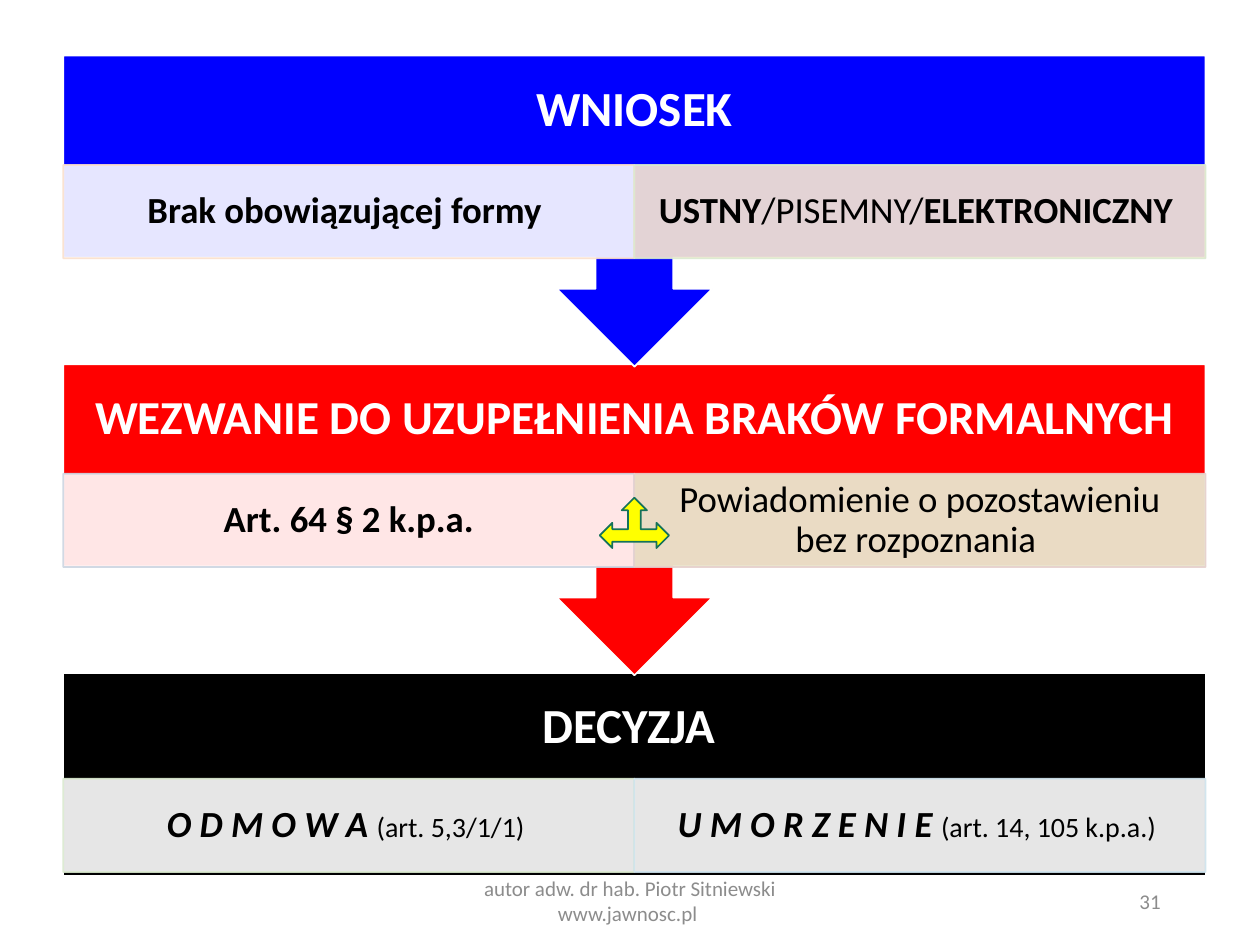
from pptx import Presentation
from pptx.dml.color import RGBColor
from pptx.enum.shapes import MSO_SHAPE as Shape
from pptx.enum.text import MSO_ANCHOR as Anchor, PP_ALIGN as Align
from pptx.oxml.ns import qn
from pptx.util import Pt
from lxml.etree import SubElement

LEFT, WIDTH = 36.1, 652.8
TOP, STEP = 31.7, 176.4
TITLE_HEIGHT, CELL_HEIGHT = 62.5, 53.3
CELL_SIZE = 21
BOLD, ITALIC = "b", "i"

# Run: (text, size, style letters). Cell: (fill, border, runs).
STAGES = [
    dict(color="0000FF", title=("WNIOSEK", 28), shape=Shape.UP_ARROW_CALLOUT,
         height=177.8, cell_offset=62.6, cells=[
             ("FFFFFF", "FADFCC", [("Brak obowiązującej formy ", CELL_SIZE, BOLD)]),
             ("FCEBD1", "DAE9CF", [("USTNY", CELL_SIZE, BOLD),
                                   ("/PISEMNY/", CELL_SIZE, ""),
                                   ("ELEKTRONICZNY ", CELL_SIZE, BOLD)])]),
    dict(color="FF0000", title=("WEZWANIE DO UZUPEŁNIENIA BRAKÓW FORMALNYCH ", 27),
         shape=Shape.UP_ARROW_CALLOUT, height=177.8, cell_offset=62.6, cells=[
             ("FFFFFF", "CDD5E2", [("Art. 64 § 2 k.p.a.", CELL_SIZE, BOLD)]),
             ("E8F3DA", "E6D0CC",
              [("Powiadomienie o pozostawieniu bez rozpoznania ", CELL_SIZE, "")])]),
    dict(color="000000", title=("DECYZJA ", 28), shape=Shape.RECTANGLE,
         height=115.9, cell_offset=60.5, cells=[
             ("FFFFFF", "DAE9CF", [("O D M O W A ", CELL_SIZE, BOLD + ITALIC),
                                   ("(art. 5,3/1/1) ", 16, "")]),
             ("FFFFFF", "CEE3ED", [("U M O R Z E N I E ", CELL_SIZE, BOLD + ITALIC),
                                   ("(art. 14, 105 k.p.a.) ", 16, "")])]),
]


def rgb(code):
    return RGBColor.from_string(code)


def set_alpha(fill_owner, percent):
    """Make the solid fill held by an XML element partly transparent."""
    color = fill_owner.find(qn("a:solidFill"))[0]
    SubElement(color, qn("a:alpha")).set("val", str(percent * 1000))


def write(frame, runs, color, align=Align.CENTER, insets=(7.2, 3.6), spacing=1.0):
    frame.word_wrap = True
    frame.vertical_anchor = Anchor.MIDDLE
    frame.margin_left = frame.margin_right = Pt(insets[0])
    frame.margin_top = frame.margin_bottom = Pt(insets[1])
    paragraph = frame.paragraphs[0]
    paragraph.alignment = align
    paragraph.line_spacing = spacing
    for text, size, style in runs:
        run = paragraph.add_run()
        run.text = text
        run.font.name = "Calibri"
        run.font.size = Pt(size)
        run.font.bold = BOLD in style
        run.font.italic = ITALIC in style
        run.font.color.rgb = rgb(color)


def add_text(slide, box, runs, color, **layout):
    textbox = slide.shapes.add_textbox(*map(Pt, box))
    write(textbox.text_frame, runs, color, **layout)


def add_block(slide, preset, box, fill, border):
    block = slide.shapes.add_shape(preset, *map(Pt, box))
    block.shadow.inherit = False
    block.fill.solid()
    block.fill.fore_color.rgb = rgb(fill)
    block.line.color.rgb = rgb(border)
    block.line.width = Pt(1)
    return block


def add_cell(slide, box, fill, border, runs):
    cell = add_block(slide, Shape.RECTANGLE, box, fill, border)
    set_alpha(cell._element.spPr, 90)
    set_alpha(cell.line._ln, 90)
    write(cell.text_frame, runs, "000000", insets=(11.5, 2.2), spacing=0.9)


def add_stage(slide, top, stage):
    body = add_block(slide, stage["shape"], (LEFT, top, WIDTH, stage["height"]),
                     stage["color"], "FFFFFF")
    if stage["shape"] == Shape.UP_ARROW_CALLOUT:
        body.rotation = 180
    title, size = stage["title"]
    add_text(slide, (LEFT, top, WIDTH, TITLE_HEIGHT), [(title, size, BOLD)],
             "FFFFFF", insets=(15.5, 15.5), spacing=0.9)
    cell_width = WIDTH / len(stage["cells"])
    for column, cell in enumerate(stage["cells"]):
        box = (LEFT + column * cell_width, top + stage["cell_offset"],
               cell_width, CELL_HEIGHT)
        add_cell(slide, box, *cell)


def main():
    deck = Presentation()
    deck.slide_width, deck.slide_height = Pt(720), Pt(540)
    slide = deck.slides.add_slide(deck.slide_layouts[6])

    add_text(slide, (238.3, 500.4, 243.4, 28.8),
             [("autor adw. dr hab. Piotr Sitniewski www.jawnosc.pl ", 12, "")], "8C8C8C")
    # Later stages lie behind, so that each arrow tip overlaps the next stage.
    for row, stage in reversed(list(enumerate(STAGES))):
        add_stage(slide, TOP + row * STEP, stage)
    add_block(slide, Shape.LEFT_RIGHT_UP_ARROW, (342.7, 284.4, 39.6, 28.8),
              "FFFF00", "157259")
    add_text(slide, (508.3, 500.4, 162, 28.8), [("31", 12, "")], "8C8C8C",
             align=Align.RIGHT)
    deck.save("out.pptx")


if __name__ == "__main__":
    main()
